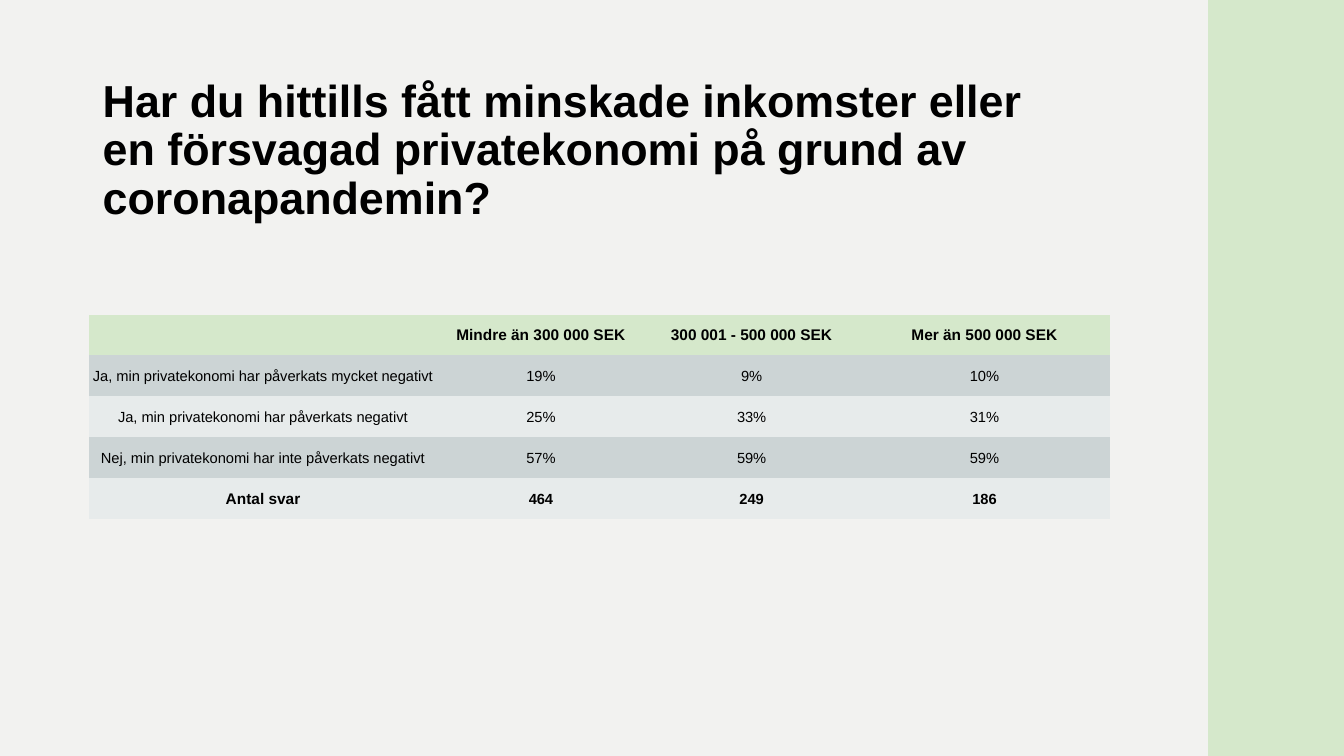
from pptx import Presentation
from pptx import util as u
from pptx.dml.color import RGBColor
from pptx.enum import shapes, text
from pptx.oxml.ns import qn

PAPER = RGBColor(0xF2, 0xF2, 0xF0)
GREEN = RGBColor(0xD5, 0xE8, 0xCB)
DARK_BAND = RGBColor(0xCC, 0xD4, 0xD5)
LIGHT_BAND = RGBColor(0xE7, 0xEB, 0xEB)
BLACK = RGBColor(0, 0, 0)
PLAIN_TABLE = "{2D5ABB26-0587-4C30-8999-92F81FD0307C}"


class SurveySlide:
    """Style and slide; lengths are columns and rows of a 100 x 100 grid."""
    font_name = "Arial"

    def __init__(self, deck):
        self.column = deck.slide_width / 100
        self.row = deck.slide_height / 100
        self.slide = deck.slides.add_slide(deck.slide_layouts[6])
        self.slide.background.fill.solid()
        self.slide.background.fill.fore_color.rgb = PAPER

    def box(self, left, top, width, height):
        return (round(left * self.column), round(top * self.row),
                round(width * self.column), round(height * self.row))

    def style(self, paragraph, size, bold):
        font = paragraph.font
        font.name, font.size, font.bold = self.font_name, u.Pt(size), bold
        font.color.rgb = BLACK

    def panel(self, *place):
        panel = self.slide.shapes.add_shape(
            shapes.MSO_SHAPE.RECTANGLE, *self.box(*place))
        panel.shadow.inherit = False
        panel.fill.solid()
        panel.fill.fore_color.rgb = GREEN
        panel.line.fill.background()

    def title(self, wording, *place):
        frame = self.slide.shapes.add_textbox(*self.box(*place)).text_frame
        frame.word_wrap = True
        frame.auto_size = text.MSO_AUTO_SIZE.NONE
        frame.vertical_anchor = text.MSO_ANCHOR.MIDDLE
        question = frame.paragraphs[0]
        question.text = wording
        question.line_spacing = 0.9
        self.style(question, 32, True)

    def cell(self, cell, wording, fill, size, bold):
        cell.fill.solid()
        cell.fill.fore_color.rgb = fill
        cell.vertical_anchor = text.MSO_ANCHOR.MIDDLE
        cell.margin_left = cell.margin_right = cell.margin_top = u.Inches(0.01)
        cell.margin_bottom = 0
        entry = cell.text_frame.paragraphs[0]
        entry.text = wording
        entry.alignment = text.PP_ALIGN.CENTER
        self.style(entry, size, bold)

    def table(self, answers, left, top, widths, row_height):
        place = self.box(left, top, sum(widths), row_height * len(answers))
        table = self.slide.shapes.add_table(
            len(answers), len(widths), *place).table
        table.first_row = table.horz_banding = False
        table._tbl.tblPr.find(qn("a:tableStyleId")).text = PLAIN_TABLE
        for column, width in zip(table.columns, widths):
            column.width = round(width * self.column)
        last = len(answers) - 1
        for r, answer in enumerate(answers):
            fill = GREEN if r == 0 else DARK_BAND if r % 2 else LIGHT_BAND
            for c, wording in enumerate(answer):
                large = r == 0 or (r == last and c == 0)
                self.cell(table.cell(r, c), wording, fill,
                          11 if large else 10.5, r in (0, last))


def main():
    deck = Presentation()
    deck.slide_width, deck.slide_height = u.Inches(13.33), u.Inches(7.5)
    survey = SurveySlide(deck)

    # Green side panel
    survey.panel(89.9, 0, 10.1, 100)

    # Question
    survey.title("Har du hittills fått minskade inkomster eller en försvagad "
                 "privatekonomi på grund av coronapandemin?",
                 6.9, 15.4, 72.3, 9.2)

    # Answers by income
    survey.table([
        ("", "Mindre än 300 000 SEK", "300 001 - 500 000 SEK",
         "Mer än 500 000 SEK"),
        ("Ja, min privatekonomi har påverkats mycket negativt",
         "19%", "9%", "10%"),
        ("Ja, min privatekonomi har påverkats negativt", "25%", "33%", "31%"),
        ("Nej, min privatekonomi har inte påverkats negativt",
         "57%", "59%", "59%"),
        ("Antal svar", "464", "249", "186"),
    ], 6.6, 41.6, (25.95, 15.4, 15.95, 18.7), 5.42)

    deck.save("out.pptx")


if __name__ == "__main__":
    main()
